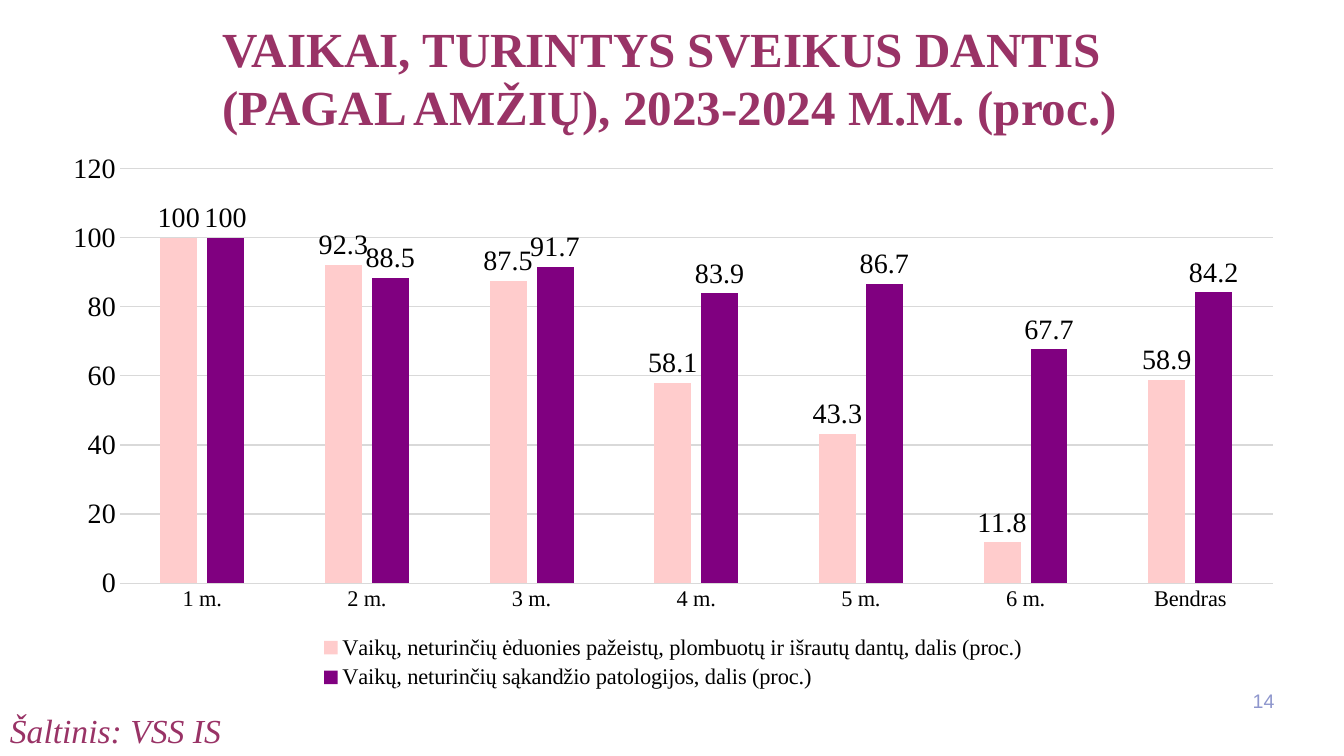
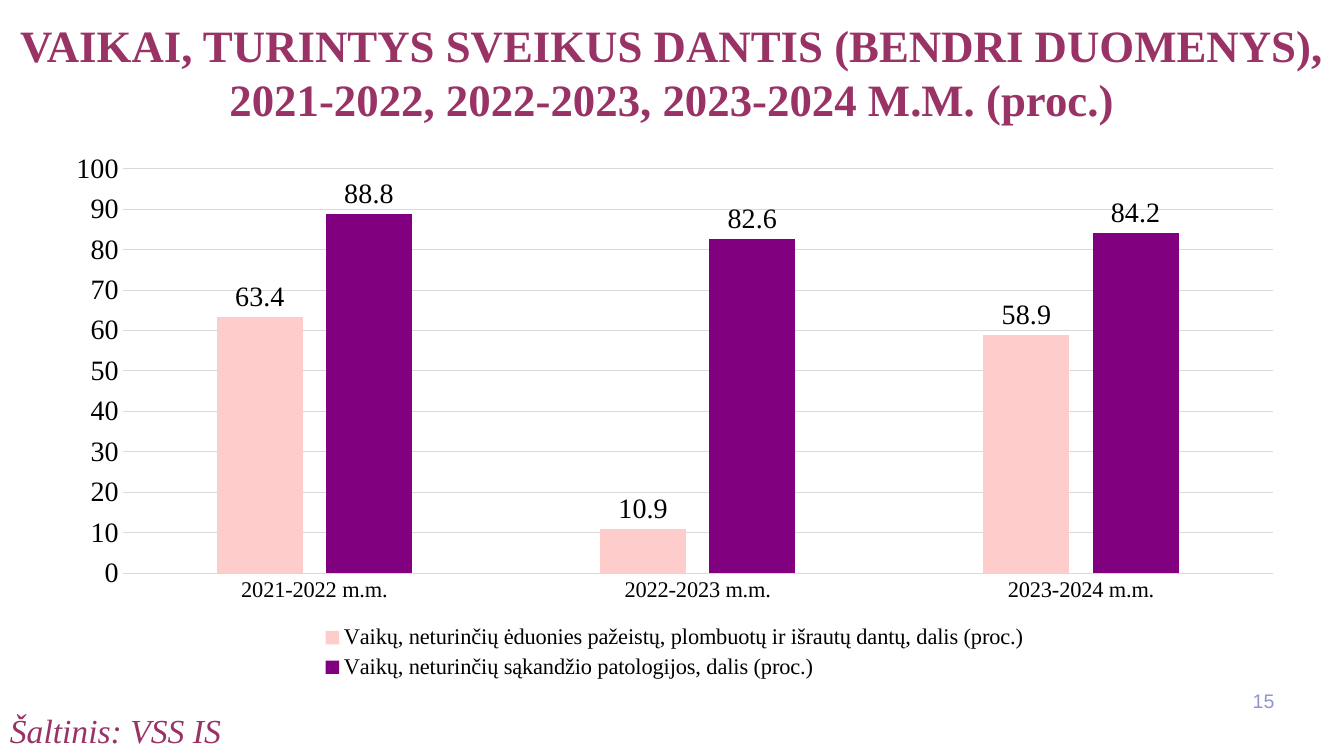
from dataclasses import dataclass

from pptx import Presentation
from pptx.chart.data import CategoryChartData
from pptx.dml.color import RGBColor
from pptx.enum.chart import XL_CHART_TYPE, XL_LABEL_POSITION, XL_LEGEND_POSITION, XL_TICK_MARK
from pptx.enum.text import MSO_AUTO_SIZE, PP_ALIGN
from pptx.util import Pt

EMU_PER_PX = 9144


@dataclass(frozen=True)
class Theme:
    """Colours, fonts and type sizes of both slides."""
    heading: RGBColor = RGBColor(0x99, 0x33, 0x66)
    ink: RGBColor = RGBColor(0, 0, 0)
    number: RGBColor = RGBColor(0x8E, 0x96, 0xCD)
    grid: RGBColor = RGBColor(0xD9, 0xD9, 0xD9)
    caries_free: RGBColor = RGBColor(0xFF, 0xCC, 0xCC)
    bite_healthy: RGBColor = RGBColor(0x80, 0, 0x80)
    serif: str = "Times New Roman"
    sans: str = "Arial"
    chart_base: str = "Calibri"
    source_size: int = 24
    value_size: int = 20
    category_size: int = 16
    number_size: int = 14
    chart_size: int = 10
    grid_width: float = 0.75


THEME = Theme()
SLIDE_SIZE = (1333, 750)
NUMBER_BOX = (1222, 679, 52, 40)
SOURCE_BOX = (0, 699, 667, 50)
SERIES = (
    ("Vaikų, neturinčių ėduonies pažeistų, plombuotų ir išrautų dantų, dalis (proc.)", THEME.caries_free),
    ("Vaikų, neturinčių sąkandžio patologijos, dalis (proc.)", THEME.bite_healthy),
)


@dataclass(frozen=True)
class DentalSlide:
    """Content of one chart slide."""
    number: str
    heading: str
    heading_box: tuple
    heading_size: int
    heading_align: PP_ALIGN
    chart_box: tuple
    categories: tuple
    shares: tuple
    scale_top: int
    scale_step: int


SLIDES = (
    DentalSlide(
        number="14",
        heading="VAIKAI, TURINTYS SVEIKUS DANTIS (PAGAL AMŽIŲ), 2023-2024 M.M. (proc.)",
        heading_box=(211, 13, 911, 128),
        heading_size=35,
        heading_align=PP_ALIGN.LEFT,
        chart_box=(48, 141, 1239, 548),
        categories=("1 m.", "2 m.", "3 m.", "4 m.", "5 m.", "6 m.", "Bendras"),
        shares=((100, 92.3, 87.5, 58.1, 43.3, 11.8, 58.9),
                (100, 88.5, 91.7, 83.9, 86.7, 67.7, 84.2)),
        scale_top=120,
        scale_step=20,
    ),
    DentalSlide(
        number="15",
        heading="VAIKAI, TURINTYS SVEIKUS DANTIS (BENDRI DUOMENYS), "
                "2021-2022, 2022-2023, 2023-2024 M.M. (proc.)",
        heading_box=(0, 13, 1333, 118),
        heading_size=32,
        heading_align=PP_ALIGN.CENTER,
        chart_box=(51, 141, 1236, 538),
        categories=("2021-2022 m.m.", "2022-2023 m.m.", "2023-2024 m.m."),
        shares=((63.4, 10.9, 58.9), (88.8, 82.6, 84.2)),
        scale_top=100,
        scale_step=10,
    ),
)


def emu(box):
    """Turn a sequence of px lengths into EMU."""
    return [length * EMU_PER_PX for length in box]


def style_font(font, size, color=THEME.ink, name=THEME.serif):
    """Set size, colour and typeface of a font."""
    font.size = Pt(size)
    font.color.rgb = color
    font.name = name


def add_text(slide, box, text, size, color, name=THEME.serif, align=PP_ALIGN.LEFT,
             bold=False, italic=False, grow=True):
    """Place one wrapped paragraph in a box."""
    frame = slide.shapes.add_textbox(*emu(box)).text_frame
    frame.word_wrap = True
    frame.auto_size = MSO_AUTO_SIZE.SHAPE_TO_FIT_TEXT if grow else MSO_AUTO_SIZE.NONE
    paragraph = frame.paragraphs[0]
    paragraph.text = text
    paragraph.alignment = align
    style_font(paragraph.font, size, color, name)
    paragraph.font.bold = bold
    paragraph.font.italic = italic


def style_axes(chart, scale_top, scale_step):
    """Format the category axis, value axis and gridlines."""
    categories, values = chart.category_axis, chart.value_axis
    for axis, size in ((categories, THEME.category_size), (values, THEME.value_size)):
        axis.major_tick_mark = axis.minor_tick_mark = XL_TICK_MARK.NONE
        style_font(axis.tick_labels.font, size)
    values.minimum_scale = 0
    values.maximum_scale = scale_top
    values.major_unit = scale_step
    values.format.line.fill.background()
    for line in (categories.format.line, values.major_gridlines.format.line):
        line.color.rgb = THEME.grid
        line.width = Pt(THEME.grid_width)


def style_columns(plot):
    """Format the paired columns and their value labels."""
    plot.gap_width = 219
    plot.overlap = -27
    plot.vary_by_categories = False
    for columns, (_, color) in zip(plot.series, SERIES):
        columns.format.fill.solid()
        columns.format.fill.fore_color.rgb = color
        columns.invert_if_negative = False
        labels = columns.data_labels
        labels.show_value = True
        labels.position = XL_LABEL_POSITION.OUTSIDE_END
        style_font(labels.font, THEME.value_size)


def add_share_chart(slide, box, content):
    """Place the clustered column chart with its legend in a box."""
    data = CategoryChartData()
    data.categories = content.categories
    for (name, _), shares in zip(SERIES, content.shares):
        data.add_series(name, shares)
    chart = slide.shapes.add_chart(XL_CHART_TYPE.COLUMN_CLUSTERED, *emu(box), data).chart
    chart.has_title = False
    style_font(chart.font, THEME.chart_size, name=THEME.chart_base)
    style_axes(chart, content.scale_top, content.scale_step)
    style_columns(chart.plots[0])
    chart.has_legend = True
    chart.legend.position = XL_LEGEND_POSITION.BOTTOM
    chart.legend.include_in_layout = False
    style_font(chart.legend.font, THEME.category_size)


def add_footer(slide, number):
    """Place the slide number and the data source."""
    add_text(slide, NUMBER_BOX, number, THEME.number_size, THEME.number, THEME.sans,
             PP_ALIGN.RIGHT, grow=False)
    add_text(slide, SOURCE_BOX, "Šaltinis: VSS IS", THEME.source_size, THEME.heading, italic=True)


def add_dental_slide(deck, content):
    """Build one slide with heading, chart and footer."""
    slide = deck.slides.add_slide(deck.slide_layouts[6])
    add_share_chart(slide, content.chart_box, content)
    add_text(slide, content.heading_box, content.heading, content.heading_size,
             THEME.heading, align=content.heading_align, bold=True)
    add_footer(slide, content.number)


def main():
    """Build and save the presentation."""
    deck = Presentation()
    deck.slide_width, deck.slide_height = emu(SLIDE_SIZE)
    for content in SLIDES:
        add_dental_slide(deck, content)
    deck.save("out.pptx")


if __name__ == "__main__":
    main()
